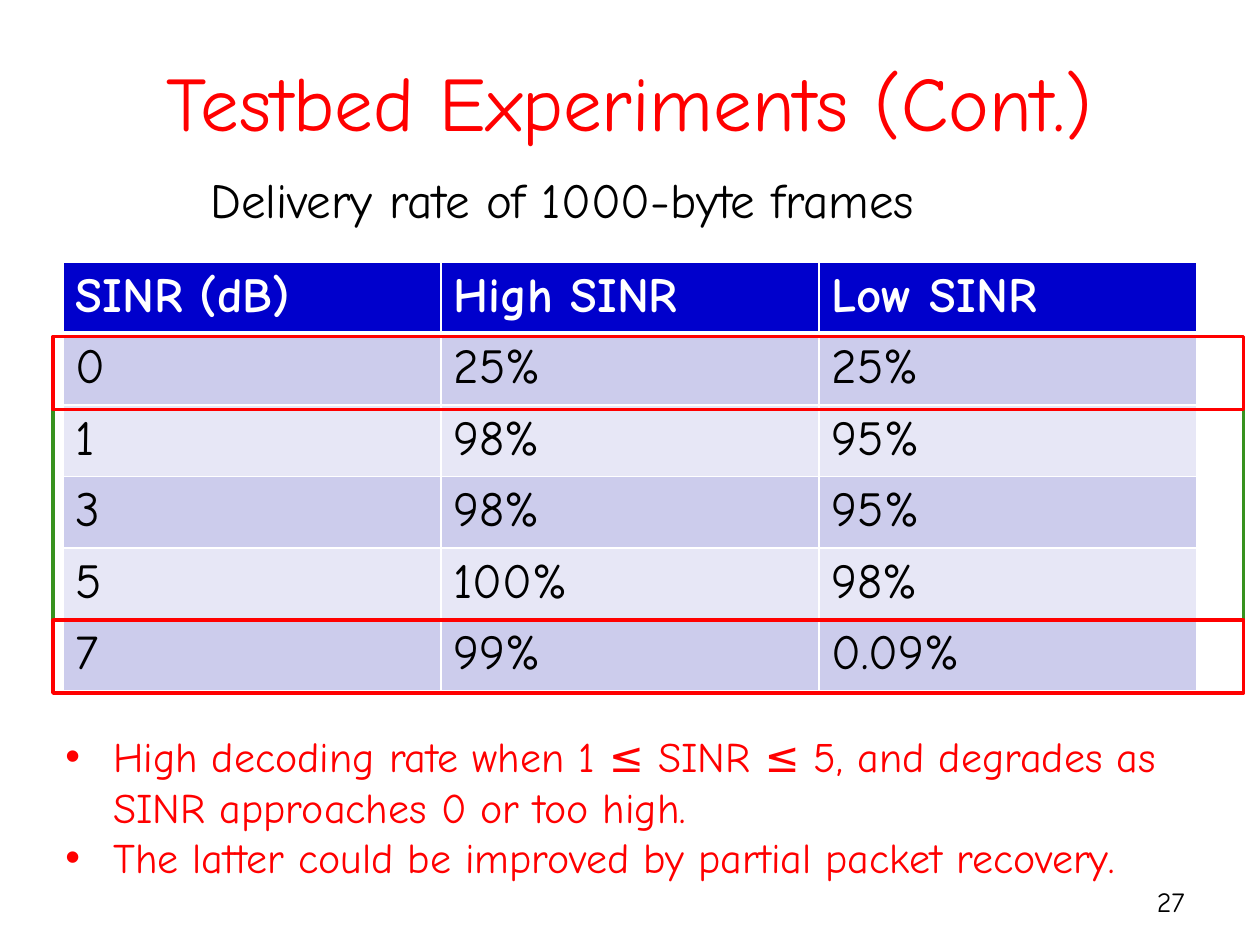
from lxml import etree
from pptx import Presentation
from pptx.dml.color import RGBColor
from pptx.enum import shapes, text
from pptx.oxml import ns
from pptx.util import Inches, Pt

FONT = "Comic Neue"
RED, GREEN, BLUE = "FF0000", "37921E", "0000CC"
BLACK, WHITE = "000000", "FFFFFF"
BANDS = ["CCCCEC", "E7E7F6"]

DELIVERY_RATES = [
    ["SINR (dB)", "High SINR", "Low SINR"],
    ["0", "25%", "25%"],
    ["1", "98%", "95%"],
    ["3", "98%", "95%"],
    ["5", "100%", "98%"],
    ["7", "99%", "0.09%"],
]
FINDINGS = [
    "High decoding rate when 1 ≤ SINR ≤ 5, and degrades as \vSINR approaches 0 or too high.",
    "The latter could be improved by partial packet recovery.",
]


def rgb(hex_code):
    return RGBColor.from_string(hex_code)


def write(frame, lines, size=28, color=BLACK, bold=False, align=None, bullet=False):
    """Fill a text frame with one formatted paragraph per line."""
    for index, line in enumerate(lines):
        paragraph = frame.paragraphs[0] if index == 0 else frame.add_paragraph()
        paragraph.text = line
        if align is not None:
            paragraph.alignment = align
        for run in paragraph.runs:
            run.font.name = FONT
            run.font.size = Pt(size)
            run.font.bold = bold
            run.font.color.rgb = rgb(color)
        if bullet:
            add_bullet(paragraph)


def add_bullet(paragraph):
    properties = paragraph._p.get_or_add_pPr()
    properties.set("marL", str(Inches(0.38)))
    properties.set("indent", str(-Inches(0.38)))
    etree.SubElement(properties, ns.qn("a:buFont"), typeface="Arial")
    etree.SubElement(properties, ns.qn("a:buChar"), char="•")


def add_text(slide, box, lines, anchor=text.MSO_ANCHOR.TOP, wrap=True, **style):
    frame = slide.shapes.add_textbox(*map(Inches, box)).text_frame
    frame.word_wrap = wrap
    frame.vertical_anchor = anchor
    if not wrap:
        frame.auto_size = text.MSO_AUTO_SIZE.SHAPE_TO_FIT_TEXT
    write(frame, lines, **style)


def add_borders(cell, bottom):
    """Draw white cell edges; they must precede the fill in the cell properties."""
    properties = cell._tc.get_or_add_tcPr()
    widths = {"a:lnL": 1, "a:lnR": 1, "a:lnT": 1, "a:lnB": bottom}
    for position, (edge, width) in enumerate(widths.items()):
        line = etree.Element(ns.qn(edge), w=str(Pt(width)))
        fill = etree.SubElement(line, ns.qn("a:solidFill"))
        etree.SubElement(fill, ns.qn("a:srgbClr"), val=WHITE)
        properties.insert(position, line)


def add_rate_table(slide, box, rates):
    table = slide.shapes.add_table(len(rates), len(rates[0]), *map(Inches, box)).table
    for r, values in enumerate(rates):
        header = r == 0
        table.rows[r].height = Inches(0.41)
        for c, value in enumerate(values):
            cell = table.cell(r, c)
            cell.fill.solid()
            cell.fill.fore_color.rgb = rgb(BLUE if header else BANDS[(r - 1) % 2])
            add_borders(cell, bottom=3 if header else 1)
            write(cell.text_frame, [value], color=WHITE if header else BLACK, bold=header)


def add_outline(slide, top, height, color):
    """Frame a group of table rows."""
    outline = slide.shapes.add_shape(
        shapes.MSO_SHAPE.RECTANGLE, Inches(0.42), Inches(top), Inches(9.45), Inches(height))
    outline.shadow.inherit = False
    outline.fill.background()
    outline.line.color.rgb = rgb(color)
    outline.line.width = Pt(2)


def main():
    deck = Presentation()
    deck.slide_width, deck.slide_height = Inches(10), Inches(7.5)
    slide = deck.slides.add_slide(deck.slide_layouts[6])
    middle = text.MSO_ANCHOR.MIDDLE

    # Title
    add_text(slide, (0.5, 0.17, 9, 1.25), ["Testbed Experiments (Cont.)"],
             anchor=middle, size=44, color=RED, align=text.PP_ALIGN.CENTER)

    # Results table and its caption
    add_rate_table(slide, (0.5, 2.08, 9, 3.4), DELIVERY_RATES)
    add_text(slide, (1.57, 1.3, 6.59, 0.57), ["Delivery rate of 1000-byte frames"], wrap=False)

    # Findings and page number
    add_text(slide, (0.42, 5.75, 9.45, 1.31), FINDINGS,
             wrap=False, size=24, color=RED, bullet=True)
    add_text(slide, (7.17, 6.95, 2.33, 0.4), ["27"],
             anchor=middle, size=16, align=text.PP_ALIGN.RIGHT)

    # Row outlines: good rates in green, poor rates in red
    add_outline(slide, 3.25, 1.67, GREEN)
    for top in (2.67, 4.92):
        add_outline(slide, top, 0.58, RED)

    deck.save("out.pptx")


if __name__ == "__main__":
    main()
